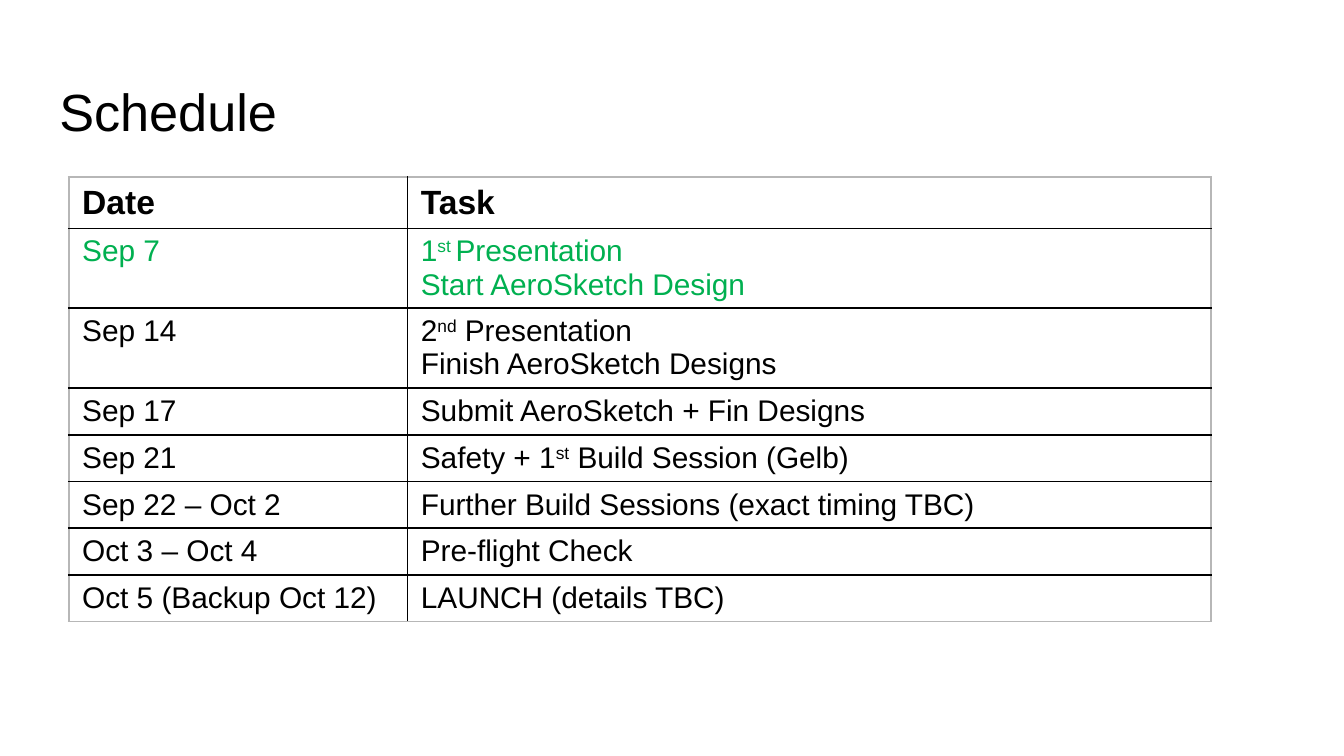
"""Build a one-page project schedule with a title and a two-column table."""
from lxml import etree
from pptx import Presentation
from pptx.dml.color import RGBColor
from pptx.enum.text import MSO_ANCHOR, MSO_AUTO_SIZE, PP_ALIGN
from pptx.oxml.ns import qn
from pptx.util import Cm, Pt

TOP = MSO_ANCHOR.TOP
LEFT = PP_ALIGN.LEFT
NO_AUTOFIT = MSO_AUTO_SIZE.NONE

BLACK = RGBColor(0x00, 0x00, 0x00)
GREEN = RGBColor(0x00, 0xB0, 0x50)
GREY = RGBColor(0xB7, 0xB7, 0xB7)

TITLE_ONLY = 5
HEADER_HEIGHT = 0.96
LINE_HEIGHT = 0.63
CELL_PADDING = 0.25
COLUMN_WIDTHS = (6.4, 15.19)

SCHEDULE = [
    ("Date", "Task"),
    ("Sep 7", "1^st ^Presentation\nStart AeroSketch Design"),
    ("Sep 14", "2^nd^ Presentation\nFinish AeroSketch Designs"),
    ("Sep 17", "Submit AeroSketch + Fin Designs"),
    ("Sep 21", "Safety + 1^st^ Build Session (Gelb)"),
    ("Sep 22 – Oct 2", "Further Build Sessions (exact timing TBC)"),
    ("Oct 3 – Oct 4", "Pre-flight Check"),
    ("Oct 5 (Backup Oct 12)", "LAUNCH (details TBC)"),
]
DONE_ROWS = {1}


class SchedulePage:
    font_name = "Arial"
    title_size = 28
    header_size = 18
    body_size = 16
    border_width = 1

    def __init__(self, deck):
        self.page = deck.slides.add_slide(deck.slide_layouts[TITLE_ONLY])

    def format_span(self, span, size, color, bold=False):
        span.font.name = self.font_name
        span.font.size = Pt(size)
        span.font.color.rgb = color
        span.font.bold = bold

    def title(self, text, left, top, width, height):
        box = self.page.shapes.title
        box.left, box.top, box.width, box.height = map(Cm, (left, top, width, height))
        frame = box.text_frame
        frame.text = text
        frame.auto_size = NO_AUTOFIT
        frame.vertical_anchor = TOP
        frame.margin_left = frame.margin_right = Cm(0.25)
        frame.margin_top = frame.margin_bottom = Cm(0.25)
        para = frame.paragraphs[0]
        para.alignment = LEFT
        self.format_span(para.runs[0], self.title_size, BLACK)

    def cell_text(self, cell, text, size, color, bold):
        frame = cell.text_frame
        frame.text = "\n" * text.count("\n")
        for para, line in zip(frame.paragraphs, text.split("\n")):
            for index, part in enumerate(line.split("^")):
                span = para.add_run()
                span.text = part
                self.format_span(span, size, color, bold)
                if index % 2:
                    span.font._element.set("baseline", "30000")

    def cell_borders(self, cell, colors):
        properties = cell._tc.get_or_add_tcPr()
        for index, (side, color) in enumerate(colors.items()):
            border = etree.Element(qn(f"a:ln{side}"), w=str(Pt(self.border_width)))
            fill = etree.SubElement(border, qn("a:solidFill"))
            etree.SubElement(fill, qn("a:srgbClr"), val=str(color))
            properties.insert(index, border)

    def table(self, rows, left, top, widths):
        heights = [HEADER_HEIGHT] + [
            LINE_HEIGHT * (task.count("\n") + 1) + CELL_PADDING for _, task in rows[1:]
        ]
        frame = self.page.shapes.add_table(
            len(rows), len(widths), Cm(left), Cm(top), Cm(sum(widths)), Cm(sum(heights))
        )
        table = frame.table
        table.first_row = table.horz_banding = False
        for column, width in zip(table.columns, widths):
            column.width = Cm(width)
        last_row, last_column = len(rows) - 1, len(widths) - 1
        for r, (texts, height) in enumerate(zip(rows, heights)):
            table.rows[r].height = Cm(height)
            size = self.body_size if r else self.header_size
            color = GREEN if r in DONE_ROWS else BLACK
            for c, text in enumerate(texts):
                cell = table.cell(r, c)
                cell.fill.background()
                self.cell_text(cell, text, size, color, r == 0)
                self.cell_borders(cell, {
                    "L": BLACK if c else GREY,
                    "R": BLACK if c < last_column else GREY,
                    "T": BLACK if r else GREY,
                    "B": BLACK if r < last_row else GREY,
                })


def main():
    deck = Presentation()
    deck.slide_width, deck.slide_height = Cm(25.4), Cm(14.29)
    schedule = SchedulePage(deck)
    schedule.title("Schedule", 0.87, 1.24, 23.67, 1.6)
    schedule.table(SCHEDULE, 1.3, 3.35, COLUMN_WIDTHS)
    deck.save("out.pptx")


if __name__ == "__main__":
    main()
